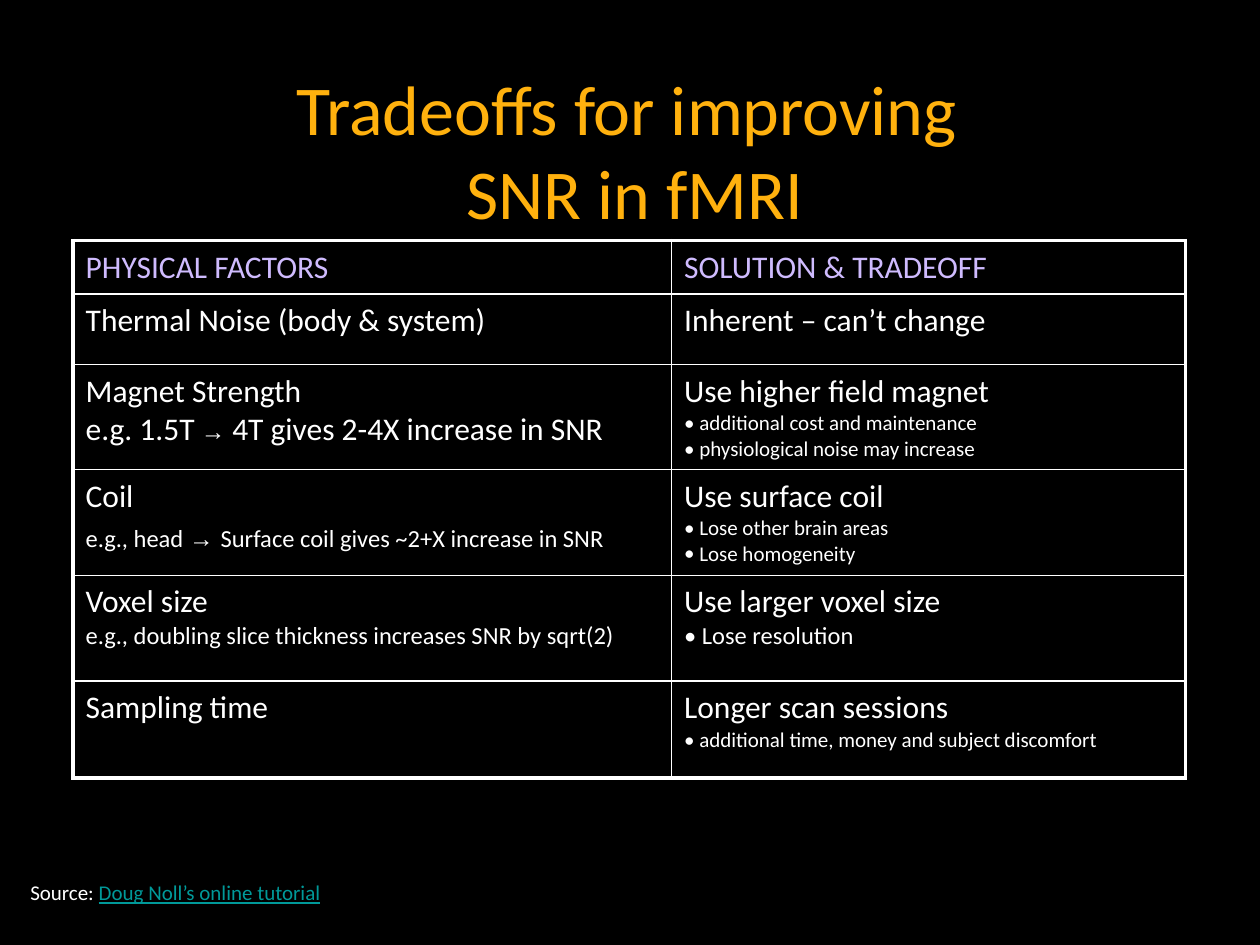
"""Build the slide on tradeoffs for improving SNR in fMRI."""
from dataclasses import dataclass

import lxml.etree
import pptx
import pptx.dml.color
import pptx.enum.text
import pptx.oxml.ns
import pptx.util

Inches = pptx.util.Inches
Pt = pptx.util.Pt
qn = pptx.oxml.ns.qn

COLORS = {"background": "000000", "title": "FFB10E", "header": "CFBBFE",
          "text": "FFFFFF", "link": "009999"}
INSET = 0.06
OUTER_BORDER, INNER_BORDER = 2.25, 1
COLUMN_WIDTHS = (4.75, 4.08)
ROW_HEIGHTS = (0.42, 0.56, 0.81, 0.84, 0.84, 0.77)


@dataclass(frozen=True)
class Span:
    text: str
    size: float = 18
    face: str = "Calibri"
    color: str = "text"
    underline: bool = False


@dataclass(frozen=True)
class Line:
    spans: tuple[Span, ...]
    bullet: bool = False
    space_before: float = 0


def plain(text: str, size: float = 18, color: str = "text") -> Line:
    """Return a line made of one span."""
    return Line((Span(text, size, color=color),))


def bullet(text: str, size: float = 12) -> Line:
    """Return a bulleted line."""
    return Line((Span(" " + text, size),), bullet=True)


ROWS = (
    ((plain("PHYSICAL FACTORS", color="header"),),
     (plain("SOLUTION & TRADEOFF", color="header"),)),
    ((plain("Thermal Noise (body & system)"),),
     (plain("Inherent – can’t change"),)),
    ((plain("Magnet Strength"),
      Line((Span("e.g. 1.5T"), Span(" ", 14, "Times New Roman"),
            Span("→ ", 14, "Arial"), Span("4T gives 2-4X increase in SNR")))),
     (plain("Use higher field magnet"),
      bullet("additional cost and maintenance"),
      bullet("physiological noise may increase"))),
    ((plain("Coil"),
      Line((Span("e.g., head ", 14), Span("→ ", 14, "Arial"),
            Span("Surface coil gives ~2+X increase in SNR", 14)), space_before=5)),
     (plain("Use surface coil"), bullet("Lose other brain areas"),
      bullet("Lose homogeneity"))),
    ((plain("Voxel size"),
      plain("e.g., doubling slice thickness increases SNR by sqrt(2)", 14)),
     (plain("Use larger voxel size"), bullet("Lose resolution", 14))),
    ((plain("Sampling time"),),
     (plain("Longer scan sessions"),
      bullet("additional time, money and subject discomfort"))),
)


def rgb(name: str) -> pptx.dml.color.RGBColor:
    """Return a named color."""
    return pptx.dml.color.RGBColor.from_string(COLORS[name])


def set_insets(target, left: float, top: float, right: float, bottom: float) -> None:
    """Set the margins of a text frame or cell."""
    target.margin_left, target.margin_top = Inches(left), Inches(top)
    target.margin_right, target.margin_bottom = Inches(right), Inches(bottom)


def set_indent(para, indent: float) -> None:
    """Set the left indent of a paragraph."""
    properties = para._p.get_or_add_pPr()
    properties.set("marL", str(Inches(indent)))
    properties.set("indent", "0")


def add_bullet(para) -> None:
    """Put a bullet in front of a paragraph."""
    properties = para._p.get_or_add_pPr()
    tint = lxml.etree.SubElement(properties, qn("a:buClr"))
    lxml.etree.SubElement(tint, qn("a:srgbClr"), val=COLORS["text"])
    lxml.etree.SubElement(properties, qn("a:buFont"), typeface="Calibri")
    lxml.etree.SubElement(properties, qn("a:buChar"), char="•")


def format_run(run, span: Span) -> None:
    """Give a run the font of a span."""
    run.font.size = Pt(span.size)
    run.font.name = span.face
    run.font.color.rgb = rgb(span.color)
    if span.underline:
        run.font.underline = True


def write_lines(frame, lines: tuple[Line, ...]) -> None:
    """Fill a text frame with formatted lines."""
    frame.text = "\n".join("" for _ in lines)
    for para, line in zip(frame.paragraphs, lines):
        set_indent(para, 0.04)
        para.space_before = Pt(line.space_before)
        if line.bullet:
            add_bullet(para)
        for span in line.spans:
            run = para.add_run()
            run.text = span.text
            format_run(run, span)


def set_borders(cell, widths: dict[str, float]) -> None:
    """Draw the four borders of a cell."""
    properties = cell._tc.get_or_add_tcPr()
    for position, (side, width) in enumerate(widths.items()):
        border = lxml.etree.Element(qn(f"a:ln{side}"), w=str(Pt(width)))
        fill = lxml.etree.SubElement(border, qn("a:solidFill"))
        lxml.etree.SubElement(fill, qn("a:srgbClr"), val=COLORS["text"])
        properties.insert(position, border)


def add_title(slide) -> None:
    """Place and format the title."""
    title = slide.shapes.title
    title.left, title.top = Inches(0.75), Inches(0.75)
    title.width, title.height = Inches(8.5), Inches(0.87)
    frame = title.text_frame
    frame.auto_size = pptx.enum.text.MSO_AUTO_SIZE.NONE
    frame.vertical_anchor = pptx.enum.text.MSO_ANCHOR.MIDDLE
    set_insets(frame, INSET, INSET, 0.16, INSET)
    para = frame.paragraphs[0]
    para.text = "Tradeoffs for improving\v SNR in fMRI"
    para.alignment = pptx.enum.text.PP_ALIGN.CENTER
    set_indent(para, 0.05)
    for run in para.runs:
        format_run(run, Span(run.text, 40, color="title"))


def add_tradeoff_table(slide) -> None:
    """Add the table of factors and solutions."""
    table = slide.shapes.add_table(
        len(ROWS), len(COLUMN_WIDTHS), Inches(0.58), Inches(1.91),
        Inches(sum(COLUMN_WIDTHS)), Inches(sum(ROW_HEIGHTS))).table
    table.first_row = table.horz_banding = False
    for column, width in zip(table.columns, COLUMN_WIDTHS):
        column.width = Inches(width)
    for row, height in zip(table.rows, ROW_HEIGHTS):
        row.height = Inches(height)
    last_row, last_column = len(ROWS) - 1, len(COLUMN_WIDTHS) - 1
    for row_index, row in enumerate(ROWS):
        for column_index, lines in enumerate(row):
            cell = table.cell(row_index, column_index)
            set_insets(cell, INSET, INSET, INSET, INSET)
            write_lines(cell.text_frame, lines)
            edges = {"L": column_index == 0, "R": column_index == last_column,
                     "T": row_index == 0, "B": row_index == last_row}
            set_borders(cell, {side: OUTER_BORDER if outer else INNER_BORDER
                               for side, outer in edges.items()})
            cell.fill.background()


def add_source(slide) -> None:
    """Add the source line."""
    box = slide.shapes.add_textbox(Inches(0.2), Inches(6.98), Inches(2.45), Inches(0.31))
    frame = box.text_frame
    frame.word_wrap = False
    frame.auto_size = pptx.enum.text.MSO_AUTO_SIZE.SHAPE_TO_FIT_TEXT
    set_insets(frame, 0, 0, 0.04, 0)
    write_lines(frame, (Line((Span("Source: ", 12),
                              Span("Doug Noll’s online tutorial", 12, color="link",
                                   underline=True))),))


def main() -> None:
    """Build and save the deck."""
    deck = pptx.Presentation()
    deck.slide_width, deck.slide_height = Inches(10), Inches(7.5)
    slide = deck.slides.add_slide(deck.slide_layouts.get_by_name("Title Only"))
    slide.background.fill.solid()
    slide.background.fill.fore_color.rgb = rgb("background")
    add_title(slide)
    add_tradeoff_table(slide)
    add_source(slide)
    deck.save("out.pptx")


if __name__ == "__main__":
    main()
